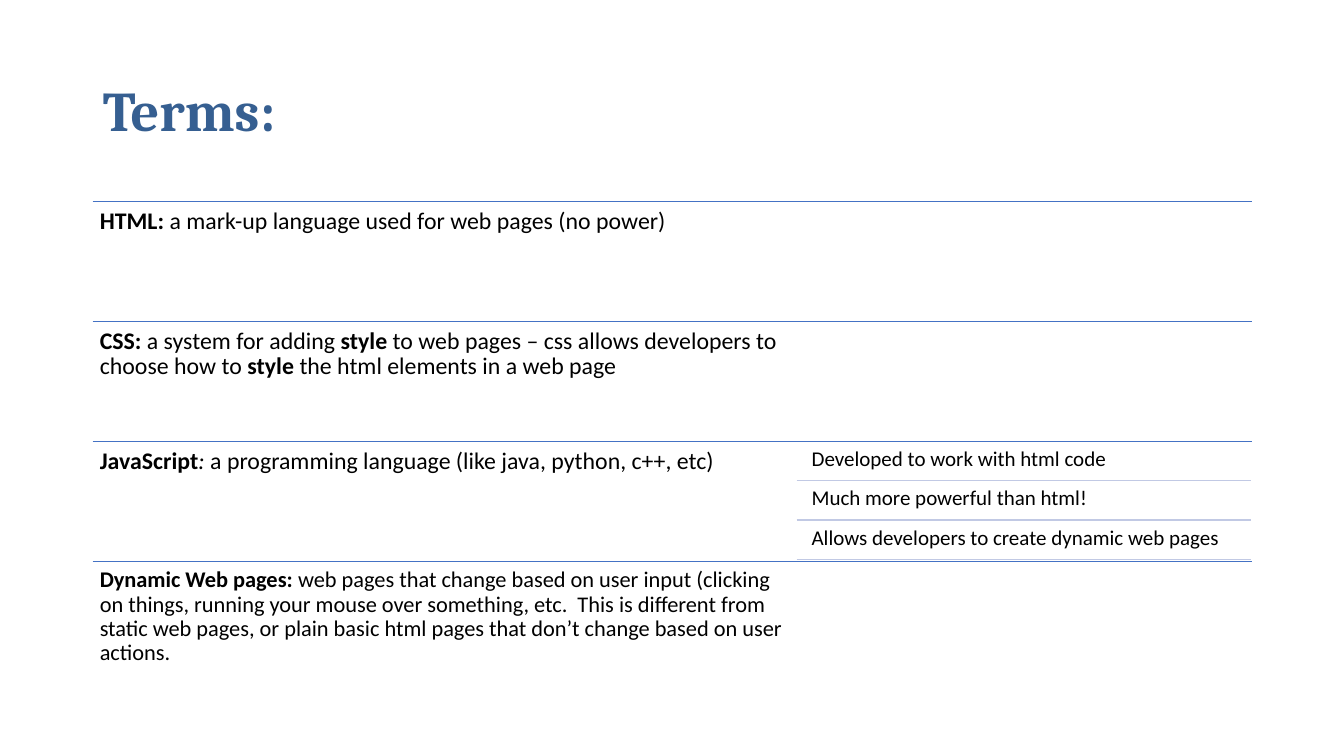
from lxml import etree
from pptx import Presentation
from pptx.dml.color import RGBColor
from pptx.enum.shapes import MSO_CONNECTOR
from pptx.enum.text import MSO_ANCHOR, MSO_AUTO_SIZE, PP_ALIGN
from pptx.oxml.ns import qn
from pptx.util import Inches, Pt

STRAIGHT = MSO_CONNECTOR.STRAIGHT
LEFT = PP_ALIGN.LEFT
TOP, MIDDLE = MSO_ANCHOR.TOP, MSO_ANCHOR.MIDDLE
NO_AUTOFIT = MSO_AUTO_SIZE.NONE

RULE_LEFT, RULE_RIGHT = 0.92, 12.42
TERMS_TOP, TERM_HEIGHT = 2, 1.19
NOTE_HEIGHT, NOTE_STEP = 0.37, 0.39

# Each term: box width, text size, runs of (text, style)
TERMS = [
    (6.77, 17, [("HTML:", "b"),
                (" a mark-up language used for web pages (no power)", "")]),
    (7.44, 17, [("CSS:", "b"), (" a system for adding ", ""), ("style", "b"),
                (" to web pages – css allows developers to choose how to ", ""),
                ("style ", "b"), ("the html elements in a web page", "")]),
    (6.99, 17, [("JavaScript", "b"), (":", "i"),
                (" a programming language (like java, python, c++, etc)", "")]),
    (6.97, 16, [("Dynamic Web pages:", "b"),
                (" web pages that change based on user input (clicking on things, "
                 "running your mouse over something, etc.  This is different from "
                 "static web pages, or plain basic html pages that don’t change "
                 "based on user actions.", "")]),
]
JAVASCRIPT_NOTES = [
    "Developed to work with html code",
    "Much more powerful than html!",
    "Allows developers to create dynamic web pages",
]

prs = Presentation()
prs.slide_width, prs.slide_height = Inches(13.33), Inches(7.5)
slide = prs.slides.add_slide(prs.slide_layouts[5])


def write(shape, box, runs, size, inset, anchor=TOP, font="Calibri", color="000000"):
    """Place a text shape and fill it with one paragraph of styled runs."""
    for side, length in zip(("left", "top", "width", "height"), box):
        setattr(shape, side, Inches(length))
    frame = shape.text_frame
    frame_format = {"word_wrap": True, "auto_size": NO_AUTOFIT, "vertical_anchor": anchor,
                    "margin_left": Inches(inset[0]), "margin_right": Inches(inset[0]),
                    "margin_top": Inches(inset[1]), "margin_bottom": Inches(inset[1])}
    for name, value in frame_format.items():
        setattr(frame, name, value)
    paragraph = frame.paragraphs[0]
    paragraph.alignment, paragraph.line_spacing = LEFT, 0.9
    for text, style in runs:
        run = paragraph.add_run()
        run.text = text
        run_format = {"name": font, "size": Pt(size),
                      "bold": style == "b", "italic": style == "i"}
        for name, value in run_format.items():
            setattr(run.font, name, value)
        run.font.color.rgb = RGBColor.from_string(color)


def add_rule(left, right, y, color):
    """Draw a thin horizontal line without a shadow."""
    rule = slide.shapes.add_connector(
        STRAIGHT, Inches(left), Inches(y), Inches(right), Inches(y))
    rule.line.color.rgb = RGBColor.from_string(color)
    rule.line.width = Pt(1)
    etree.SubElement(rule._element.spPr, qn("a:effectLst"))


# Title
write(slide.shapes.title, (RULE_LEFT, 0.4, 11.5, 1.45), [("Terms:", "b")], 40,
      (0.1, 0.05), MIDDLE, "Cambria", "365F91")

# Terms, each under its rule
for row, (width, size, runs) in enumerate(TERMS):
    top = TERMS_TOP + row * TERM_HEIGHT
    add_rule(RULE_LEFT, RULE_RIGHT, top, "4472C4")
    term = slide.shapes.add_textbox(0, 0, 0, 0)
    write(term, (RULE_LEFT, top, width, TERM_HEIGHT), runs, size, (0.07, 0.07))

# Notes beside JavaScript, each above its rule
for row, text in enumerate(JAVASCRIPT_NOTES):
    top = 4.39 + row * NOTE_STEP
    note = slide.shapes.add_textbox(0, 0, 0, 0)
    write(note, (7.99, top, 4.43, NOTE_HEIGHT), [(text, "")], 15, (0.06, 0.06))
    add_rule(7.9, 12.41, top + 0.38, "C1C9E4")

prs.save("out.pptx")
